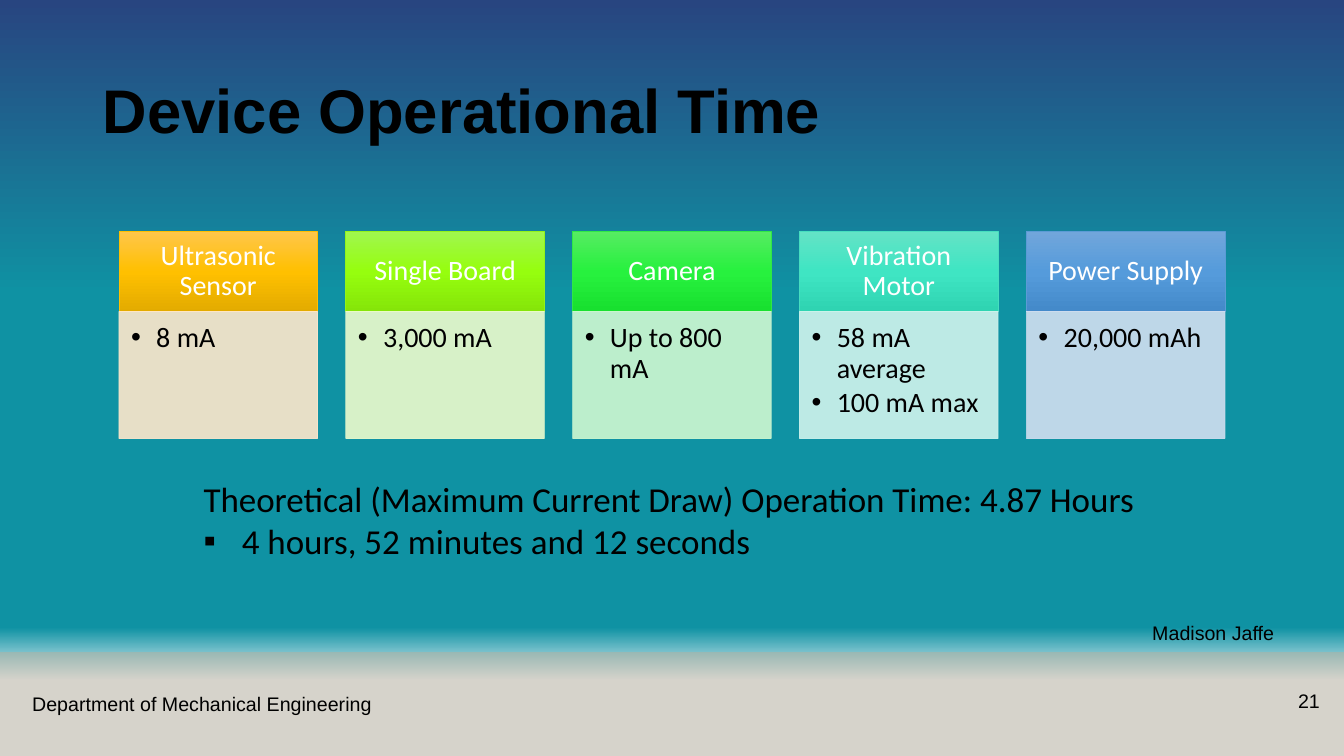
from dataclasses import dataclass, field
from typing import Any, NamedTuple

from lxml import etree
from pptx import Presentation
from pptx import util as u
from pptx.dml.color import RGBColor
from pptx.enum import shapes, text
from pptx.oxml.ns import qn

EMU_PER_PX = 9144


def px(length: int) -> u.Emu:
    return u.Emu(length * EMU_PER_PX)


class Stop(NamedTuple):
    position: int
    colour: str


class Box(NamedTuple):
    left: int
    top: int
    width: int
    height: int


class Insets(NamedTuple):
    left: int = 10
    top: int = 5
    right: int = 10
    bottom: int = 5


@dataclass(frozen=True)
class Theme:
    ink: str = "000000"
    header_ink: str = "FFFFFF"
    footer_band: str = "B7B09C"
    heading: str = "Arial"
    body: str = "Calibri"
    title_size: int = 44
    summary_size: int = 25
    card_size: int = 20
    footer_size: int = 14
    backdrop: tuple[Stop, ...] = (
        Stop(10, "F6F8FC"), Stop(17, "0F92A3"), Stop(39, "0F92A3"),
        Stop(61, "0F92A3"), Stop(100, "284580"),
    )


THEME = Theme()


@dataclass(frozen=True)
class Style:
    size: int
    name: str
    colour: str = THEME.ink
    bold: bool = False


@dataclass(frozen=True)
class Line:
    wording: str
    bullet: str = ""
    indent: int = 0
    layout: dict[str, Any] = field(default_factory=dict)


@dataclass(frozen=True)
class Component:
    label: str
    draws: tuple[str, ...]
    shades: tuple[str, str, str]
    edge: str
    panel: str


COMPONENTS = (
    Component("Ultrasonic Sensor", ("8 mA",),
              ("FFC64B", "FFC000", "E3AB00"), "FFC000", "FFE8CC"),
    Component("Single Board", ("3,000 mA",),
              ("A0F74E", "96FE0E", "85E509"), "94F319", "EDFCCD"),
    Component("Camera", ("Up to 800 mA",),
              ("56EC62", "27F13E", "18E02F"), "30E845", "CFF8D1"),
    Component("Vibration Motor", ("58 mA average", "100 mA max"),
              ("63E3C6", "3FE5C3", "2FD4B2"), "46DEBF", "D0F4ED"),
    Component("Power Supply", ("20,000 mAh",),
              ("71A6DB", "559BDB", "448ACA"), "5B9BD5", "D2DFF0"),
)
CARD_LEFT, CARD_PITCH, CARD_WIDTH = 118, 225, 197
HEADER_TOP, HEADER_HEIGHT, PANEL_HEIGHT = 230, 79, 126


def apply(target: Any, values: dict[str, Any]) -> None:
    for name, value in values.items():
        setattr(target, name, value)


def paint_gradient(fill: Any, owner: Any, stops: tuple[Stop, ...], angle: int) -> None:
    fill.gradient()
    fill.gradient_angle = angle
    stop_list = owner.find(f".//{qn('a:gsLst')}")
    for old in list(stop_list):
        stop_list.remove(old)
    for stop in stops:
        entry = etree.SubElement(stop_list, qn("a:gs"), pos=str(stop.position * 1000))
        etree.SubElement(entry, qn("a:srgbClr"), val=stop.colour)


def set_opacity(shape: Any, percent: int) -> None:
    for colour in shape._element.spPr.iter(qn("a:srgbClr")):
        etree.SubElement(colour, qn("a:alpha"), val=str(percent * 1000))


def write(frame: Any, lines: list[Line], style: Style, insets: Insets = Insets(),
          wrap: bool = True, anchor: Any = text.MSO_ANCHOR.TOP) -> None:
    apply(frame, {
        "auto_size": text.MSO_AUTO_SIZE.NONE, "word_wrap": wrap, "vertical_anchor": anchor,
        "margin_left": px(insets.left), "margin_top": px(insets.top),
        "margin_right": px(insets.right), "margin_bottom": px(insets.bottom),
    })
    for index, line in enumerate(lines):
        paragraph = frame.add_paragraph() if index else frame.paragraphs[0]
        if line.bullet:
            properties = paragraph._p.get_or_add_pPr()
            properties.set("marL", str(px(line.indent)))
            properties.set("indent", str(-px(line.indent)))
            etree.SubElement(properties, qn("a:buFont"), typeface="Arial")
            etree.SubElement(properties, qn("a:buChar"), char=line.bullet)
        apply(paragraph, {"alignment": text.PP_ALIGN.LEFT, **line.layout})
        run = paragraph.add_run()
        run.text = line.wording
        apply(run.font, {"size": u.Pt(style.size), "name": style.name, "bold": style.bold})
        run.font.color.rgb = RGBColor.from_string(style.colour)


def add_text(slide: Any, box: Box, lines: list[Line], style: Style, wrap: bool = True) -> None:
    write(slide.shapes.add_textbox(*map(px, box)).text_frame, lines, style, wrap=wrap)


def add_rectangle(slide: Any, box: Box, edge: str = "") -> Any:
    rectangle = slide.shapes.add_shape(shapes.MSO_SHAPE.RECTANGLE, *map(px, box))
    rectangle.shadow.inherit = False
    if edge:
        rectangle.line.color.rgb = RGBColor.from_string(edge)
        rectangle.line.width = u.Pt(0.5)
    else:
        rectangle.line.fill.background()
    return rectangle


def add_panel(slide: Any, box: Box, colour: str, opacity: int, edge: str = "") -> Any:
    panel = add_rectangle(slide, box, edge)
    panel.fill.solid()
    panel.fill.fore_color.rgb = RGBColor.from_string(colour)
    set_opacity(panel, opacity)
    return panel


def add_card(slide: Any, left: int, component: Component) -> None:
    header = add_rectangle(
        slide, Box(left, HEADER_TOP, CARD_WIDTH, HEADER_HEIGHT), component.edge)
    stops = tuple(Stop(*pair) for pair in zip((0, 50, 100), component.shades))
    paint_gradient(header.fill, header._element.spPr, stops, 270)
    centred = {"alignment": text.PP_ALIGN.CENTER, "line_spacing": 0.9}
    write(header.text_frame, [Line(component.label, layout=centred)],
          Style(THEME.card_size, THEME.body, THEME.header_ink),
          Insets(16, 9, 16, 9), anchor=text.MSO_ANCHOR.MIDDLE)

    panel_box = Box(left, HEADER_TOP + HEADER_HEIGHT, CARD_WIDTH, PANEL_HEIGHT)
    panel = add_panel(slide, panel_box, component.panel, 90, component.panel)
    spaced = {"line_spacing": 0.9, "space_after": u.Pt(3)}
    write(panel.text_frame, [Line(draw, "•", 25, spaced) for draw in component.draws],
          Style(THEME.card_size, THEME.body), Insets(12, 12, 16, 17))


def main() -> None:
    deck = Presentation()
    apply(deck, {"slide_width": px(1333), "slide_height": px(750)})
    slide = deck.slides.add_slide(deck.slide_layouts[5])
    paint_gradient(slide.background.fill, slide._element, THEME.backdrop, 90)

    footer = Style(THEME.footer_size, THEME.heading)
    add_panel(slide, Box(0, 647, 1333, 103), THEME.footer_band, 50)
    add_text(slide, Box(22, 682, 359, 34),
             [Line("Department of Mechanical Engineering")], footer, wrap=False)

    title = slide.shapes.title
    apply(title, dict(zip(Box._fields, map(px, Box(92, 40, 1150, 145)))))
    write(title.text_frame, [Line("Device Operational Time", layout={"line_spacing": 0.9})],
          Style(THEME.title_size, THEME.heading, bold=True), anchor=text.MSO_ANCHOR.MIDDLE)

    add_text(slide, Box(1242, 679, 77, 40),
             [Line("21", layout={"alignment": text.PP_ALIGN.RIGHT})], footer)
    for index, component in enumerate(COMPONENTS):
        add_card(slide, CARD_LEFT + index * CARD_PITCH, component)
    add_text(slide, Box(192, 469, 949, 94), [
        Line("Theoretical (Maximum Current Draw) Operation Time: 4.87 Hours"),
        Line("4 hours, 52 minutes and 12 seconds", "▪", 38),
    ], Style(THEME.summary_size, THEME.body))
    add_text(slide, Box(1133, 614, 200, 34),
             [Line("Madison Jaffe", layout={"line_spacing": 0.9})], footer)
    deck.save("out.pptx")


if __name__ == "__main__":
    main()
